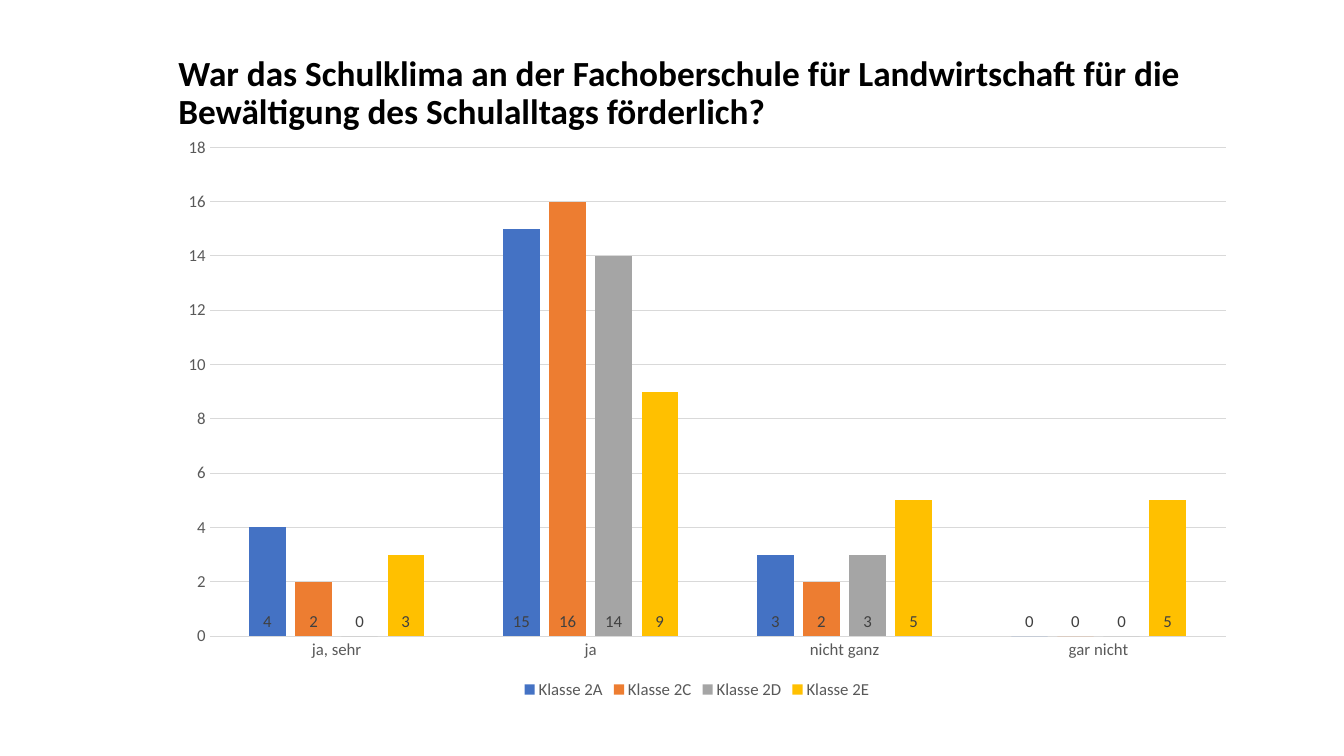
from lxml import etree
from pptx import Presentation
from pptx import util as u
from pptx.chart.data import CategoryChartData
from pptx.dml.color import RGBColor
from pptx.enum import chart as ch, text

FONT = "Calibri"
COLORS = {
    "title": "000000",
    "axis": "595959",
    "label": "404040",
    "grid": "D9D9D9",
    "Klasse 2A": "4472C4",
    "Klasse 2C": "ED7D31",
    "Klasse 2D": "A5A5A5",
    "Klasse 2E": "FFC000",
}
TITLE = ("War das Schulklima an der Fachoberschule für Landwirtschaft für die "
         "Bewältigung des Schulalltags förderlich?")
ANSWERS = ["ja, sehr", "ja", "nicht ganz", "gar nicht"]
VOTES = {
    "Klasse 2A": (4, 15, 3, 0),
    "Klasse 2C": (2, 16, 2, 0),
    "Klasse 2D": (0, 14, 3, 0),
    "Klasse 2E": (3, 9, 5, 5),
}
PLOT_BOX = {"x": 0.039, "y": 0.018, "w": 0.961, "h": 0.863}


def rgb(name):
    return RGBColor.from_string(COLORS[name])


def set_font(font, size, color, bold=False):
    font.name = FONT
    font.size = u.Pt(size)
    font.bold = bold
    font.color.rgb = rgb(color)


def set_line(line):
    line.color.rgb = rgb("grid")
    line.width = u.Pt(0.75)


def set_plot_box(chart):
    area = chart.element.find(".//{*}plotArea")
    ns = etree.QName(area).namespace
    for old in area.findall(f"{{{ns}}}layout"):
        area.remove(old)
    layout = etree.Element(f"{{{ns}}}layout")
    manual = etree.SubElement(layout, f"{{{ns}}}manualLayout")
    settings = {"layoutTarget": "inner", "xMode": "edge", "yMode": "edge", **PLOT_BOX}
    for tag, val in settings.items():
        etree.SubElement(manual, f"{{{ns}}}{tag}").set("val", str(val))
    area.insert(0, layout)


def add_title(slide, left, top, width, height):
    tf = slide.shapes.add_textbox(left, top, width, height).text_frame
    tf.word_wrap = True
    tf.vertical_anchor = text.MSO_ANCHOR.BOTTOM
    p = tf.paragraphs[0]
    p.text = TITLE
    p.line_spacing = 0.9
    set_font(p.font, 25.2, "title", True)


def add_votes_chart(slide, left, top, width, height):
    data = CategoryChartData()
    data.categories = ANSWERS
    for name, votes in VOTES.items():
        data.add_series(name, votes)
    chart = slide.shapes.add_chart(
        ch.XL_CHART_TYPE.COLUMN_CLUSTERED, left, top, width, height, data).chart
    set_font(chart.font, 10, "title")
    chart.has_title = False
    chart.has_legend = True
    chart.legend.position = ch.XL_LEGEND_POSITION.BOTTOM
    chart.legend.include_in_layout = False
    set_font(chart.legend.font, 12, "axis")

    for axis in (chart.category_axis, chart.value_axis):
        axis.major_tick_mark = axis.minor_tick_mark = ch.XL_TICK_MARK.NONE
        set_font(axis.tick_labels.font, 12, "axis")
    set_line(chart.category_axis.format.line)
    value_axis = chart.value_axis
    value_axis.minimum_scale, value_axis.maximum_scale = 0, 18
    value_axis.major_unit = 2
    value_axis.format.line.fill.background()
    set_line(value_axis.major_gridlines.format.line)

    plot = chart.plots[0]
    plot.vary_by_categories = False
    plot.gap_width = 219
    plot.overlap = -27
    for series in plot.series:
        series.format.fill.solid()
        series.format.fill.fore_color.rgb = rgb(series.name)
        labels = series.data_labels
        labels.show_value = True
        labels.position = ch.XL_LABEL_POSITION.INSIDE_BASE
        set_font(labels.font, 12, "label")
    set_plot_box(chart)


def main():
    prs = Presentation()
    prs.slide_width, prs.slide_height = u.Inches(13.33), u.Inches(7.5)
    slide = prs.slides.add_slide(prs.slide_layouts[6])
    left, width = u.Inches(1.67), u.Inches(10.49)
    add_title(slide, left, u.Inches(0.52), width, u.Inches(0.84))
    add_votes_chart(slide, left, u.Inches(1.36), width, u.Inches(5.62))
    prs.save("out.pptx")


if __name__ == "__main__":
    main()
